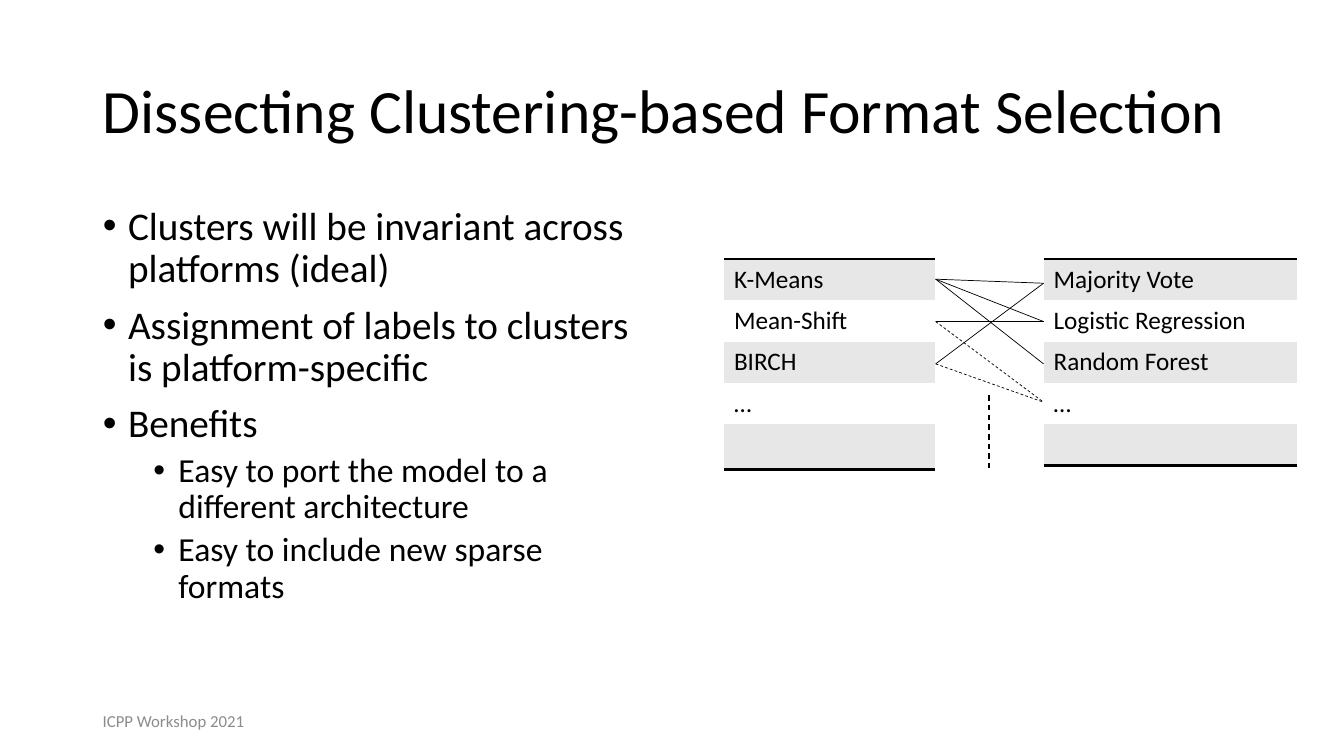
import pptx
import pptx.util
import pptx.dml.color
import pptx.enum.dml
import pptx.enum.shapes
import pptx.enum.text
from lxml import etree
from pptx.oxml.ns import qn
from pptx.util import Inches, Pt

COLORS = {"text": "000000", "band": "E7E7E7", "plain": "FFFFFF", "footer": "8C8C8C"}
FONT = "Calibri"
NO_STYLE = "{2D5ABB26-0587-4C30-8999-92F81FD0307C}"
MIDDLE = pptx.enum.text.MSO_ANCHOR.MIDDLE
LEFT = pptx.enum.text.PP_ALIGN.LEFT

# Content
BULLETS = [
    (0, "Clusters will be invariant across platforms (ideal)"),
    (0, "Assignment of labels to clusters is platform-specific"),
    (0, "Benefits"),
    (1, "Easy to port the model to a different architecture"),
    (1, "Easy to include new sparse formats"),
]
LEVELS = [
    {"size": 28, "before": 10, "indent": 0.25},
    {"size": 24, "before": 5, "indent": 0.75},
]
CLUSTERERS = ["K-Means", "Mean-Shift", "BIRCH", "…", ""]
LABELLERS = ["Majority Vote", "Logistic Regression", "Random Forest", "…", ""]

# Line ends beside the table rows
LEFT_X, RIGHT_X = 9.28, 10.35
LEFT_Y = [2.77, 3.19, 3.61]
RIGHT_Y = [2.81, 3.19, 3.61, 3.99]
SOLID_LINKS = [(0, 2), (2, 0), (1, 1), (0, 1), (0, 0)]
DASHED_LINKS = [(1, 3), (2, 3)]


def rgb(name):
    return pptx.dml.color.RGBColor.from_string(COLORS[name])


def set_all(obj, values):
    for name, value in values.items():
        setattr(obj, name, value)


def write(p, text, size, color="text", **paragraph_format):
    set_all(p, {"alignment": LEFT, **paragraph_format})
    if text:
        r = p.add_run()
        r.text = text
        set_all(r.font, {"name": FONT, "size": Pt(size)})
        r.font.color.rgb = rgb(color)


def place(sp, x, y, w, h, **frame_format):
    set_all(sp, {"left": Inches(x), "top": Inches(y),
                 "width": Inches(w), "height": Inches(h)})
    set_all(sp.text_frame, {"word_wrap": True, **frame_format})
    return sp.text_frame


def add_bullet(p, indent):
    pPr = p._p.get_or_add_pPr()
    pPr.set("marL", str(Inches(indent)))
    pPr.set("indent", str(-Inches(0.25)))
    etree.SubElement(pPr, qn("a:buFont"), typeface="Arial")
    etree.SubElement(pPr, qn("a:buChar"), char="•")


def add_body(sp):
    tf = place(sp, 0.92, 2, 5.67, 4.76,
               auto_size=pptx.enum.text.MSO_AUTO_SIZE.NONE)
    for i, (level, text) in enumerate(BULLETS):
        p = tf.add_paragraph() if i else tf.paragraphs[0]
        style = LEVELS[level]
        write(p, text, style["size"], level=level, line_spacing=0.9,
              space_before=Pt(style["before"]))
        add_bullet(p, style["indent"])


def add_border(cell, side):
    ln = etree.Element(qn("a:" + side), w=str(Pt(2)))
    fill = etree.SubElement(ln, qn("a:solidFill"))
    etree.SubElement(fill, qn("a:srgbClr"), val=COLORS["text"])
    cell._tc.get_or_add_tcPr().insert(0, ln)


def add_list_table(s, x, width, labels, last_height):
    heights = [0.41] * (len(labels) - 1) + [last_height]
    frame = s.shapes.add_table(len(labels), 1, Inches(x), Inches(2.57),
                               Inches(width), Inches(sum(heights)))
    table = frame.table
    set_all(table, {"first_row": False, "horz_banding": False})
    table._tbl.tblPr.find(qn("a:tableStyleId")).text = NO_STYLE
    for i, (label, height) in enumerate(zip(labels, heights)):
        table.rows[i].height = Inches(height)
        cell = table.cell(i, 0)
        cell.fill.solid()
        cell.fill.fore_color.rgb = rgb("plain" if i % 2 else "band")
        write(cell.text_frame.paragraphs[0], label, 18)
    add_border(table.cell(0, 0), "lnT")
    add_border(table.cell(len(labels) - 1, 0), "lnB")


def add_line(s, x1, y1, x2, y2, width=0.5, dashed=False):
    line = s.shapes.add_connector(pptx.enum.shapes.MSO_CONNECTOR.STRAIGHT,
                                  Inches(x1), Inches(y1), Inches(x2), Inches(y2))
    line.line.color.rgb = rgb("text")
    line.line.width = Pt(width)
    if dashed:
        line.line.dash_style = pptx.enum.dml.MSO_LINE.DASH
    etree.SubElement(line._element.spPr, qn("a:effectLst"))


def main():
    prs = pptx.Presentation()
    set_all(prs, {"slide_width": Inches(13.33), "slide_height": Inches(7.5)})
    s = prs.slides.add_slide(prs.slide_layouts[1])

    # Title and list
    tf = place(s.shapes.title, 0.92, 0.4, 11.5, 1.45, vertical_anchor=MIDDLE,
               auto_size=pptx.enum.text.MSO_AUTO_SIZE.NONE)
    write(tf.paragraphs[0], "Dissecting Clustering-based Format Selection", 44,
          line_spacing=0.9)
    add_body(s.placeholders[1])

    # Tables
    add_list_table(s, 7.18, 2.09, CLUSTERERS, 0.45)
    add_list_table(s, 10.35, 2.51, LABELLERS, 0.41)

    # Pairings of clusterers and labellers
    for links, dashed in ((SOLID_LINKS, False), (DASHED_LINKS, True)):
        for i, j in links:
            add_line(s, LEFT_X, LEFT_Y[i], RIGHT_X, RIGHT_Y[j], dashed=dashed)
    add_line(s, 9.81, 3.92, 9.81, 4.64, width=1, dashed=True)

    # Footer
    footer = s.shapes.add_textbox(0, 0, 0, 0)
    tf = place(footer, 0.92, 6.95, 3, 0.4, vertical_anchor=MIDDLE)
    write(tf.paragraphs[0], "ICPP Workshop 2021", 12, "footer")

    prs.save("out.pptx")


if __name__ == "__main__":
    main()
